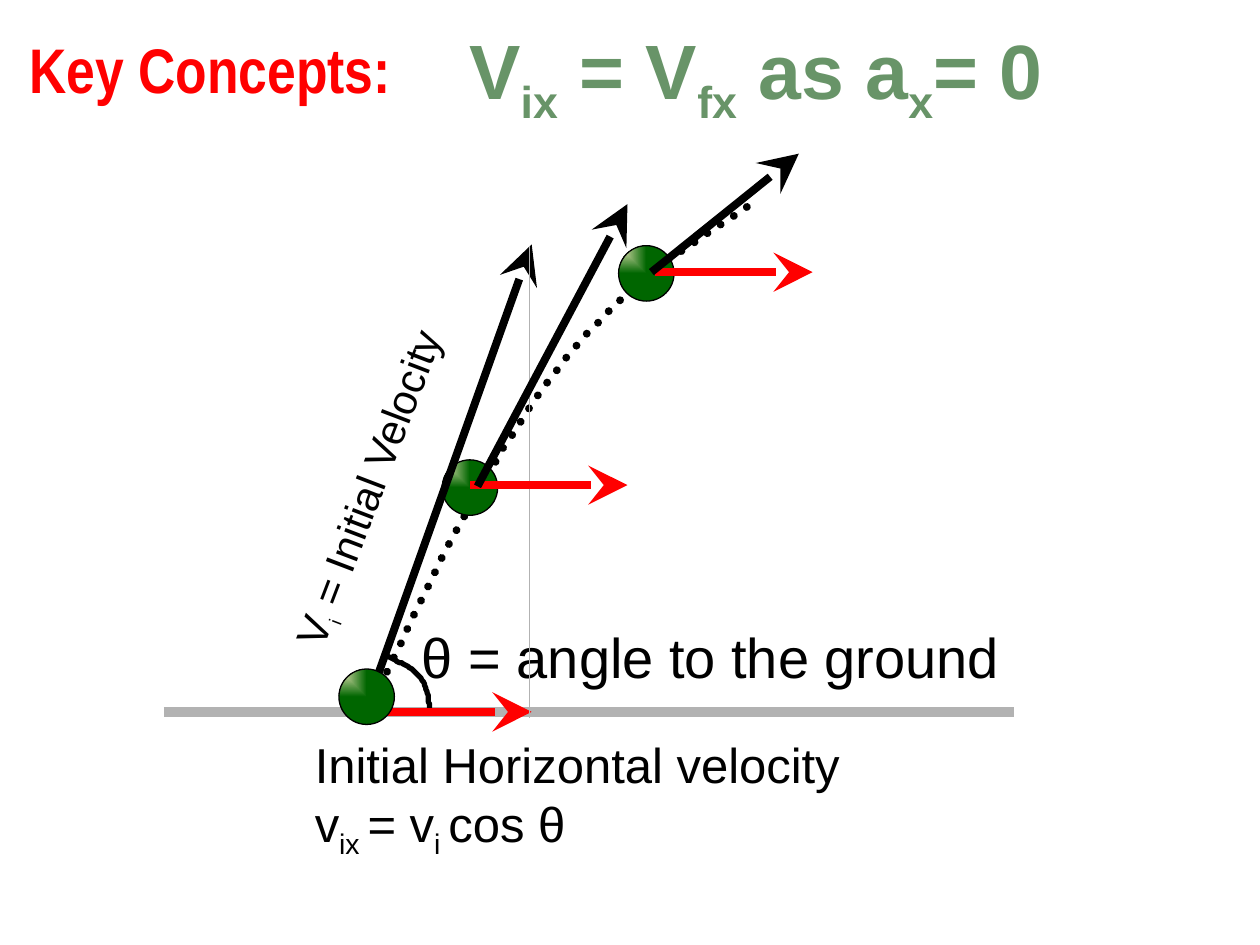
import pptx
import pptx.dml.color
import pptx.enum.dml
import pptx.enum.shapes
import pptx.enum.text
import pptx.oxml
import pptx.oxml.ns
import pptx.util

PX = 9144  # EMU in one px, at 100 px to the inch
BLACK = pptx.dml.color.RGBColor(0x00, 0x00, 0x00)
RED = pptx.dml.color.RGBColor(0xFF, 0x00, 0x00)
GRAY = pptx.dml.color.RGBColor(0xB2, 0xB2, 0xB2)
SAGE = pptx.dml.color.RGBColor(0x68, 0x94, 0x68)
CREAM = pptx.dml.color.RGBColor(0xF5, 0xEB, 0xC1)
GREEN = pptx.dml.color.RGBColor(0x00, 0x66, 0x00)

BALL_SIZE = 44
ARROW_WIDTH = 4.5
HORIZONTAL_REACH = 125
SUBSCRIPT = -25000
CURVE_STEPS = 16


def px(length):
    return pptx.util.Emu(length * PX)


def bezier_points(start, curves):
    """Sample chained cubic curves, each given as two controls and an end."""
    points = [start]
    for first, second, end in curves:
        corners = (points[-1], first, second, end)
        for step in range(1, CURVE_STEPS + 1):
            t = step / CURVE_STEPS
            weights = ((1 - t) ** 3, 3 * t * (1 - t) ** 2, 3 * t * t * (1 - t), t ** 3)
            points.append(tuple(
                sum(weight * corner[axis] for weight, corner in zip(weights, corners))
                for axis in (0, 1)))
    return points


class Diagram:
    def __init__(self, slide, font="Arial"):
        self.slide = slide
        self.font = font

    def outline(self, shape, color, width):
        shape.line.color.rgb = color
        shape.line.width = pptx.util.Pt(width)
        return shape.element.spPr.find(pptx.oxml.ns.qn("a:ln"))

    def line(self, start, end, color, width, arrow=False):
        connector = self.slide.shapes.add_connector(
            pptx.enum.shapes.MSO_CONNECTOR.STRAIGHT, *map(px, start + end))
        stroke = self.outline(connector, color, width)
        if arrow:
            head = pptx.oxml.ns.qn("a:tailEnd")
            stroke.append(stroke.makeelement(
                head, {"type": "stealth", "w": "lg", "len": "lg"}))
        effects = pptx.oxml.ns.qn("a:effectLst")
        connector.element.spPr.append(stroke.makeelement(effects, {}))

    def arrow(self, start, end, color=BLACK):
        self.line(start, end, color, ARROW_WIDTH, arrow=True)

    def horizontal_arrow(self, left, top):
        self.arrow((left, top), (left + HORIZONTAL_REACH, top), RED)

    def curve(self, start, curves, width, dotted=False):
        points = bezier_points(start, curves)
        builder = self.slide.shapes.build_freeform(*points[0], scale=PX)
        builder.add_line_segments(points[1:], close=False)
        shape = builder.convert_to_shape()
        shape.shadow.inherit = False
        shape.fill.background()
        stroke = self.outline(shape, BLACK, width)
        if dotted:
            shape.line.dash_style = pptx.enum.dml.MSO_LINE.ROUND_DOT
            stroke.set("cap", "rnd")

    def ball(self, left, top):
        shape = self.slide.shapes.add_shape(
            pptx.enum.shapes.MSO_SHAPE.OVAL,
            px(left), px(top), px(BALL_SIZE), px(BALL_SIZE))
        shape.shadow.inherit = False
        shape.fill.gradient()
        for stop, color in zip(shape.fill.gradient_stops, (CREAM, GREEN)):
            stop.color.rgb = color
        linear = shape.element.spPr.find(".//" + pptx.oxml.ns.qn("a:lin"))
        corner = pptx.oxml.parse_xml(
            f'<a:path {pptx.oxml.ns.nsdecls("a")} path="rect">'
            '<a:fillToRect r="100000" b="100000"/></a:path>')
        linear.getparent().replace(linear, corner)
        self.outline(shape, BLACK, 0.75)

    def text(self, box, paragraphs, size, color=BLACK, font=None, title=False,
             rotation=0, subscript_size=None):
        """Write paragraphs whose runs alternate between normal and subscript."""
        shape = self.slide.shapes.add_textbox(*map(px, box))
        shape.rotation = rotation
        frame = shape.text_frame
        frame.word_wrap = not title
        frame.auto_size = pptx.enum.text.MSO_AUTO_SIZE.SHAPE_TO_FIT_TEXT
        for index, runs in enumerate(paragraphs):
            paragraph = frame.add_paragraph() if index else frame.paragraphs[0]
            if title:
                paragraph.alignment = pptx.enum.text.PP_ALIGN.CENTER
            for position, words in enumerate(runs):
                lowered = position % 2 == 1
                run = paragraph.add_run()
                run.text = words
                run.font.name = font or self.font
                run.font.size = pptx.util.Pt(subscript_size if lowered and subscript_size else size)
                run.font.bold = title
                run.font.color.rgb = color
                if lowered:
                    run.font._element.set("baseline", str(SUBSCRIPT))


def main():
    presentation = pptx.Presentation()
    presentation.slide_width = px(1000)
    presentation.slide_height = px(750)
    diagram = Diagram(presentation.slides.add_slide(presentation.slide_layouts[6]))

    # Flight path and launch velocity
    diagram.curve((297, 556), [((327, 490), (358, 425), (389, 373)),
                               ((420, 322), (447, 283), (482, 248)),
                               ((517, 213), (558, 187), (598, 161))], 4.5, dotted=True)
    diagram.ball(351, 365)
    diagram.arrow((297, 544), (422, 194))
    diagram.text((120, 320, 375, 50), [["V", "i", " = Initial Velocity"]], 24,
                 rotation=290.9, subscript_size=18)

    # Ground, launch angle and horizontal velocity
    diagram.line((130, 565), (805, 565), GRAY, 6)
    diagram.curve((308, 521), [((318, 526), (327, 530), (333, 537)),
                               ((339, 544), (340, 553), (341, 562))], 3)
    diagram.text((325, 489, 517, 63), [["θ = angle to the ground"]], 32)
    diagram.horizontal_arrow(297, 565)
    diagram.line((420, 195), (420, 570), GRAY, 0.75)
    diagram.text((240, 578, 543, 104),
                 [["Initial Horizontal velocity"], ["v", "ix ", "= v", "i ", "cos θ"]], 28)
    diagram.ball(491, 195)
    diagram.ball(269, 531)

    diagram.text((12, 19, 321, 71), [["Key Concepts: "]], 36, RED, "Arial Narrow", title=True)
    diagram.text((343, 13, 514, 84), [["V", "ix", " = V", "fx", " as a", "x", "= 0"]],
                 44, SAGE, title=True)

    # Velocities later in the flight
    diagram.horizontal_arrow(373, 385)
    diagram.horizontal_arrow(520, 216)
    diagram.arrow((379, 386), (498, 162))
    diagram.arrow((517, 216), (634, 122))

    presentation.save("out.pptx")


if __name__ == "__main__":
    main()
